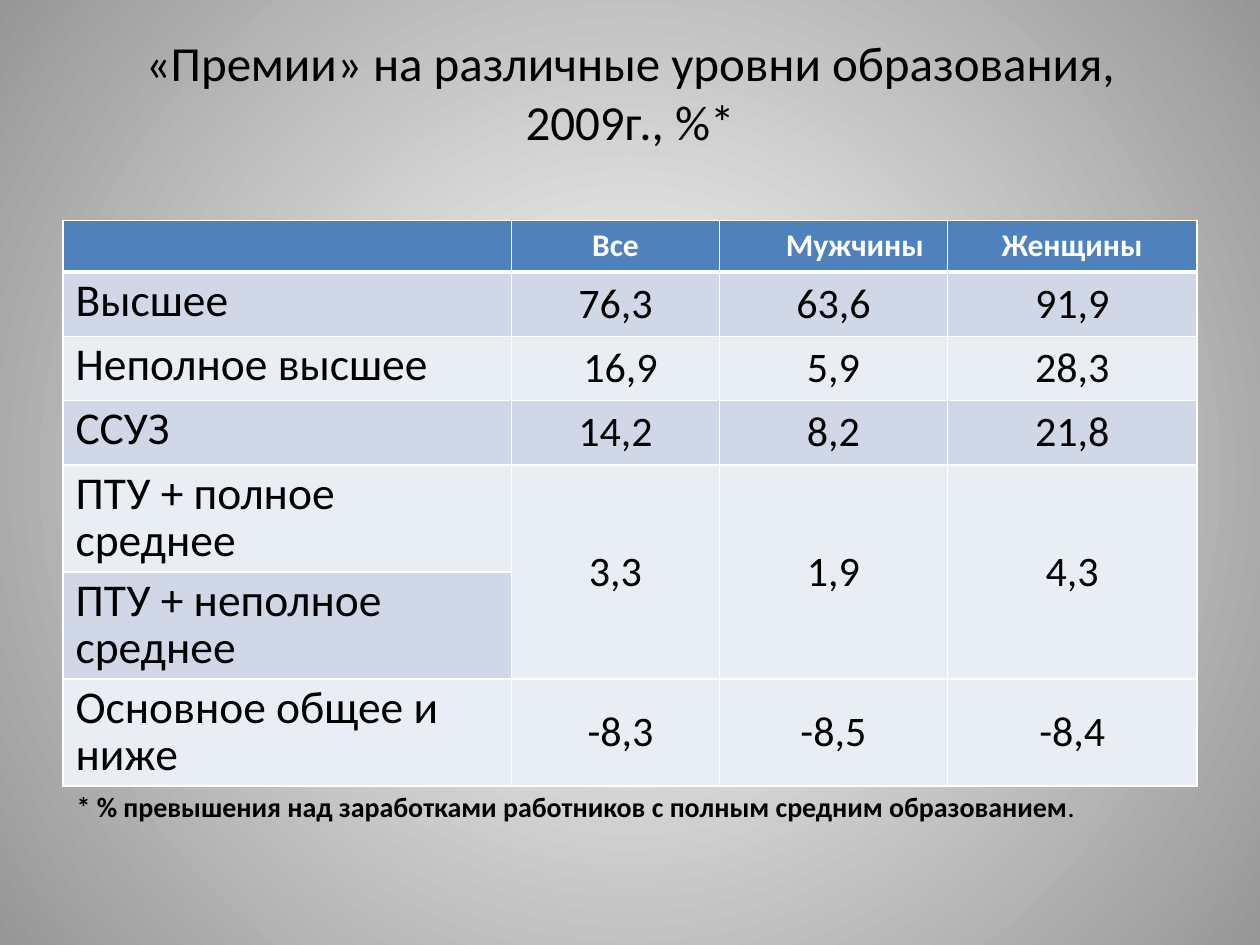
from dataclasses import dataclass

from lxml.etree import SubElement
from pptx import Presentation
from pptx.dml.color import RGBColor
from pptx.enum.text import MSO_ANCHOR, MSO_AUTO_SIZE, PP_ALIGN
from pptx.oxml import parse_xml
from pptx.oxml.ns import nsdecls, qn
from pptx.slide import Slide
from pptx.util import Inches, Pt

WIDTH, HEIGHT = 10, 7.5
COLUMN_WIDTHS = [3.56, 1.65, 1.81, 1.98]
ROW_HEIGHTS = [0.41] + [0.51] * 3 + [0.85] * 3
HEADINGS = ["", "Все", "Мужчины", "Женщины"]
PREMIUMS = [
    ["Высшее", "76,3", "63,6", "91,9"],
    ["Неполное высшее", "16,9", "5,9", "28,3"],
    ["ССУЗ", "14,2", "8,2", "21,8"],
    ["ПТУ + полное среднее", "3,3", "1,9", "4,3"],
    ["ПТУ + неполное среднее", "", "", ""],
    ["Основное общее и ниже", "-8,3", "-8,5", "-8,4"],
]
INDENTS = {(0, 2): 0.34, (2, 1): 0.08, (6, 1): 0.08}
MERGED_ROWS = (4, 5)


def color(hex_string):
    return RGBColor.from_string(hex_string)


def write(paragraph, text, font="Calibri", size=18, fill="000000", bold=False,
          align=PP_ALIGN.LEFT, spacing=1.0):
    paragraph.alignment = align
    paragraph.line_spacing = spacing
    for index, line in enumerate(text.split("\n")):
        if index:
            paragraph.add_line_break()
        run = paragraph.add_run()
        run.text = line
        run.font.name = font
        run.font.size = Pt(size)
        run.font.bold = bold
        run.font.color.rgb = color(fill)


def set_borders(cell, widths, fill):
    properties = cell._tc.get_or_add_tcPr()
    for index, (side, width) in enumerate(zip("LRTB", widths)):
        line = parse_xml(f'<a:ln{side} {nsdecls("a")} w="{Pt(width)}"><a:solidFill>'
                         f'<a:srgbClr val="{fill}"/></a:solidFill></a:ln{side}>')
        properties.insert(index, line)


@dataclass
class PremiumSlide:
    slide: Slide
    header: str = "4F81BD"
    bands: tuple = ("E9EDF4", "D0D8E8")
    border: str = "FFFFFF"

    def background(self, center, edge):
        fill = self.slide.background.fill
        fill.gradient()
        for stop, position, hex_string in zip(fill.gradient_stops, (0, 1), (center, edge)):
            stop.position = position
            stop.color.rgb = color(hex_string)
        gradient = self.slide.element.find(".//" + qn("a:gradFill"))
        gradient.remove(gradient.find(qn("a:lin")))
        path = SubElement(gradient, qn("a:path"), {"path": "circle"})
        SubElement(path, qn("a:fillToRect"), dict.fromkeys("ltrb", "50000"))

    def text_box(self, left, top, width, height):
        box = self.slide.shapes.add_textbox(
            Inches(left * WIDTH), Inches(top * HEIGHT),
            Inches(width * WIDTH), Inches(height * HEIGHT))
        box.text_frame.word_wrap = True
        return box.text_frame

    def title(self, text):
        frame = self.text_box(0.05, 0.04, 0.9, 0.167)
        frame.vertical_anchor = MSO_ANCHOR.MIDDLE
        frame.margin_top, frame.margin_bottom = 0, Inches(0.4)
        write(frame.paragraphs[0], text, size=28, align=PP_ALIGN.CENTER)

    def footnote(self, text, ending):
        frame = self.text_box(0.051, 0.836, 0.898, 0.043)
        frame.auto_size = MSO_AUTO_SIZE.SHAPE_TO_FIT_TEXT
        paragraph = frame.paragraphs[0]
        write(paragraph, text, size=16, bold=True, spacing=0.8)
        write(paragraph, ending, size=16, spacing=0.8)

    def cell(self, cell, row, column, text):
        cell.fill.solid()
        cell.fill.fore_color.rgb = color(self.bands[row % 2] if row else self.header)
        set_borders(cell, (1, 1, 3 if row == 1 else 1, 1 if row else 3), self.border)
        cell.margin_left = Inches(0.1 + INDENTS.get((row, column), 0))
        if column and row >= MERGED_ROWS[0]:
            cell.vertical_anchor = MSO_ANCHOR.MIDDLE
        if not text:
            return
        paragraph = cell.text_frame.paragraphs[0]
        if row == 0:
            write(paragraph, text, fill="FFFFFF", bold=True, align=PP_ALIGN.CENTER)
        elif column == 0:
            write(paragraph, text, size=26, spacing=0.85)
        else:
            write(paragraph, text, size=24, align=PP_ALIGN.CENTER)

    def table(self, rows):
        table = self.slide.shapes.add_table(
            len(rows), len(COLUMN_WIDTHS), Inches(0.05 * WIDTH), Inches(1.75),
            Inches(sum(COLUMN_WIDTHS)), Inches(sum(ROW_HEIGHTS))).table
        for column, width in zip(table.columns, COLUMN_WIDTHS):
            column.width = Inches(width)
        for row, height in zip(table.rows, ROW_HEIGHTS):
            row.height = Inches(height)
        for row, texts in enumerate(rows):
            for column, text in enumerate(texts):
                self.cell(table.cell(row, column), row, column, text)
        first, last = MERGED_ROWS
        for column in range(1, len(COLUMN_WIDTHS)):
            table.cell(first, column).merge(table.cell(last, column))


def main():
    presentation = Presentation()
    presentation.slide_width = Inches(WIDTH)
    presentation.slide_height = Inches(HEIGHT)
    page = PremiumSlide(presentation.slides.add_slide(presentation.slide_layouts[6]))
    page.background("FFFFFF", "979797")
    page.title("«Премии» на различные уровни образования,\n2009г., %*")
    page.table([HEADINGS] + PREMIUMS)
    page.footnote("* % превышения над заработками работников с полным средним образованием", ".")
    presentation.save("out.pptx")


if __name__ == "__main__":
    main()
